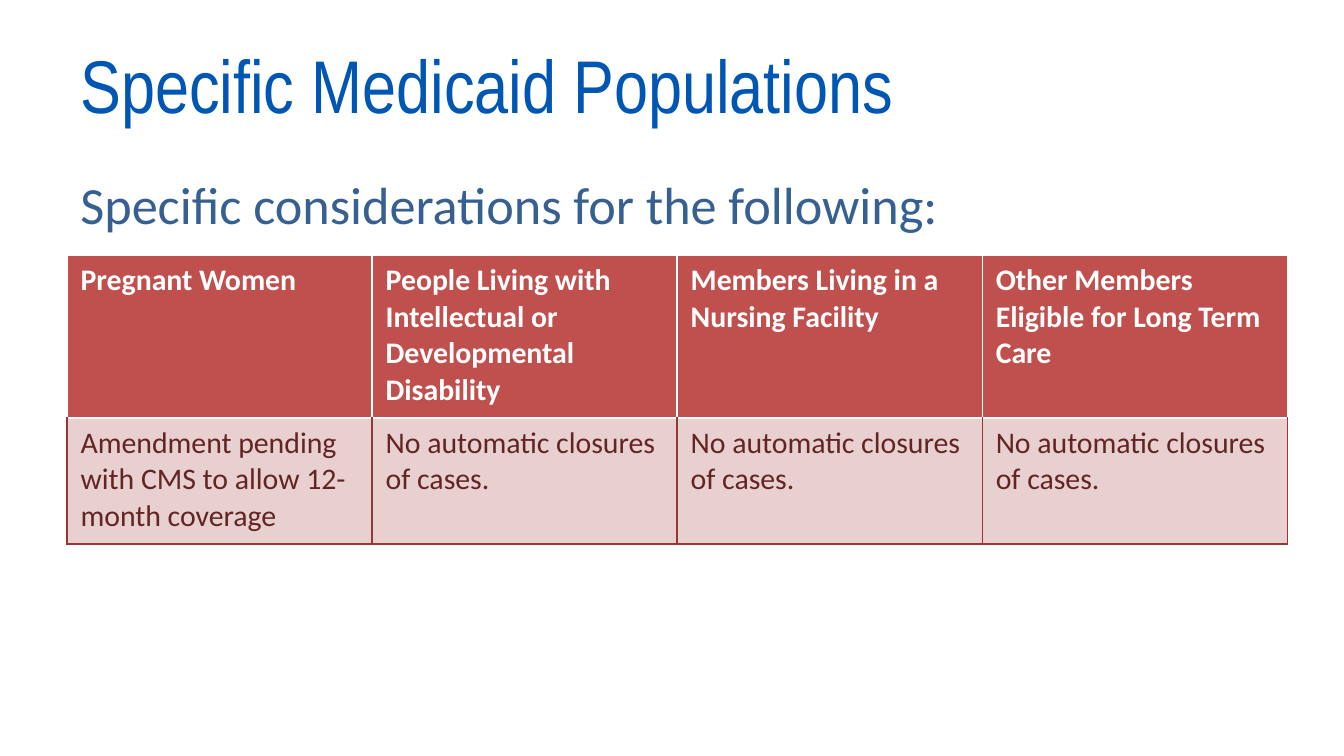
from lxml import etree
from pptx import Presentation
from pptx.dml.color import RGBColor
from pptx.enum.text import MSO_ANCHOR
from pptx.oxml.ns import qn
from pptx.util import Inches, Pt

TOP, MIDDLE = MSO_ANCHOR.TOP, MSO_ANCHOR.MIDDLE
WHITE, RED, PINK = "FFFFFF", "C0504D", "E8D0D0"
DARK_RED, BORDER_RED = "632523", "953735"
LEFT, COLUMN_WIDTH = 0.5, 2.27
ROW_HEIGHTS = [1.21, 0.94]


def color(value):
    return RGBColor.from_string(value)


def write(text_frame, text, font_name, size, text_color, bold=False):
    run = text_frame.paragraphs[0].add_run()
    run.text = text
    run.font.name = font_name
    run.font.size = Pt(size)
    run.font.bold = bold
    run.font.color.rgb = color(text_color)


# Widescreen slide, 16:9
presentation = Presentation()
presentation.slide_width = Inches(10)
presentation.slide_height = Inches(10) * 9 // 16
slide = presentation.slides.add_slide(presentation.slide_layouts[6])

# Title and lead-in
headings = [
    ("Specific Medicaid Populations", 0.15, 0.94, MIDDLE, "Arial Narrow", 40, "0056B3"),
    ("Specific considerations for the following:", 1.23, 3.8, TOP, "Calibri", 28, "376092"),
]
for text, top, height, anchor, font_name, size, text_color in headings:
    box = slide.shapes.add_textbox(Inches(LEFT), Inches(top), Inches(9), Inches(height))
    box.text_frame.word_wrap = True
    box.text_frame.vertical_anchor = anchor
    write(box.text_frame, text, font_name, size, text_color)

# Table of populations
no_closures = "No automatic closures of cases."
populations = [
    ("Pregnant Women", "Amendment pending with CMS to allow 12-month coverage"),
    ("People Living with Intellectual or Developmental Disability", no_closures),
    ("Members Living in a Nursing Facility", no_closures),
    ("Other Members Eligible for Long Term Care", no_closures),
]
table = slide.shapes.add_table(
    len(ROW_HEIGHTS), len(populations), Inches(LEFT), Inches(1.9),
    Inches(COLUMN_WIDTH * len(populations)), Inches(sum(ROW_HEIGHTS))).table
for row, height in zip(table.rows, ROW_HEIGHTS):
    row.height = Inches(height)

# Fill, text color, bold and side/bottom border color of each row
row_styles = [(RED, WHITE, True, WHITE), (PINK, DARK_RED, False, BORDER_RED)]
for column_index, population in enumerate(populations):
    table.columns[column_index].width = Inches(COLUMN_WIDTH)
    for row_index, text in enumerate(population):
        fill_color, text_color, bold, border_color = row_styles[row_index]
        cell = table.cell(row_index, column_index)
        write(cell.text_frame, text, "Calibri", 16, text_color, bold)

        # Borders come before the fill in the cell properties
        properties = cell._tc.get_or_add_tcPr()
        for side in ("lnL", "lnR", "lnT", "lnB"):
            line = etree.SubElement(properties, qn(f"a:{side}"), w=str(Pt(1)))
            line_fill = etree.SubElement(line, qn("a:solidFill"))
            line_color = WHITE if side == "lnT" else border_color
            etree.SubElement(line_fill, qn("a:srgbClr"), val=line_color)
        cell.fill.solid()
        cell.fill.fore_color.rgb = color(fill_color)

presentation.save("out.pptx")
